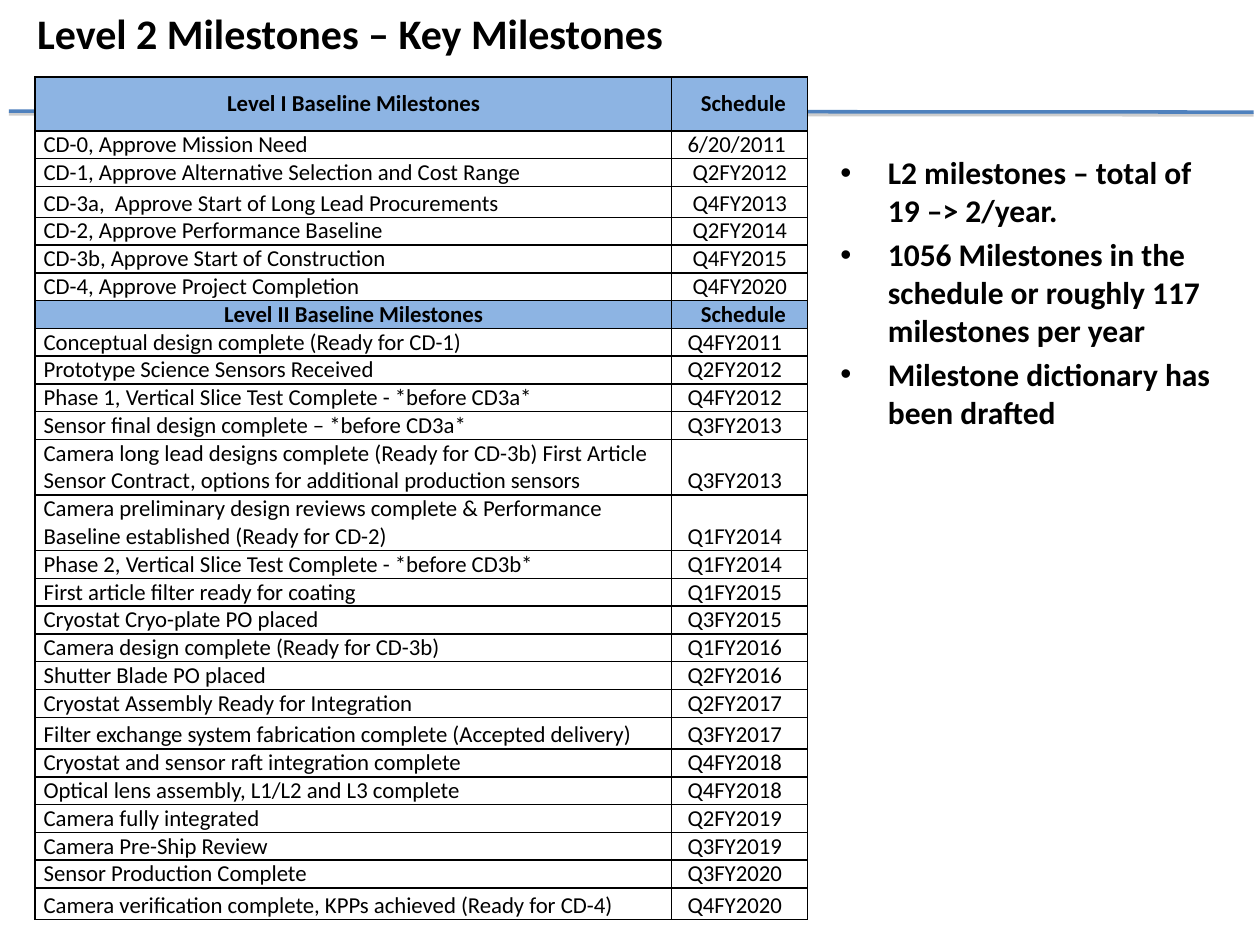
from lxml import etree
from pptx import Presentation
from pptx import util as u
from pptx.dml.color import RGBColor
from pptx.enum import shapes, text
from pptx.oxml import parse_xml
from pptx.oxml.ns import nsdecls, qn

COLORS = {"text": "000000", "header": "8DB4E3", "border": "000000",
          "rule": "4F81BD", "shadow": "808080"}
FONT = "Calibri"
ROW_H = 0.56
HEADER = "Schedule"

MILESTONES = [
    ("Level I Baseline Milestones", HEADER),
    ("CD-0, Approve Mission Need", "6/20/2011"),
    ("CD-1, Approve Alternative Selection and Cost Range", " Q2FY2012"),
    ("CD-3a,  Approve Start of Long Lead Procurements", " Q4FY2013"),
    ("CD-2, Approve Performance Baseline", " Q2FY2014"),
    ("CD-3b, Approve Start of Construction", " Q4FY2015"),
    ("CD-4, Approve Project Completion", " Q4FY2020"),
    ("Level II Baseline Milestones", HEADER),
    ("Conceptual design complete (Ready for CD-1)", "Q4FY2011"),
    ("Prototype Science Sensors Received", "Q2FY2012"),
    ("Phase 1, Vertical Slice Test Complete - *before CD3a*", "Q4FY2012"),
    ("Sensor final design complete – *before CD3a*", "Q3FY2013"),
    ("Camera long lead designs complete (Ready for CD-3b) First Article "
     "Sensor Contract, options for additional production sensors", "Q3FY2013"),
    ("Camera preliminary design reviews complete & Performance "
     "Baseline established (Ready for CD-2)", "Q1FY2014"),
    ("Phase 2, Vertical Slice Test Complete - *before CD3b*", "Q1FY2014"),
    ("First article filter ready for coating", "Q1FY2015"),
    ("Cryostat Cryo-plate PO placed", "Q3FY2015"),
    ("Camera design complete (Ready for CD-3b)", "Q1FY2016"),
    ("Shutter Blade PO placed", "Q2FY2016"),
    ("Cryostat Assembly Ready for Integration", "Q2FY2017"),
    ("Filter exchange system fabrication complete (Accepted delivery)", "Q3FY2017"),
    ("Cryostat and sensor raft integration complete", "Q4FY2018"),
    ("Optical lens assembly, L1/L2 and L3 complete", "Q4FY2018"),
    ("Camera fully integrated", "Q2FY2019"),
    ("Camera Pre-Ship Review", "Q3FY2019"),
    ("Sensor Production Complete", "Q3FY2020"),
    ("Camera verification complete, KPPs achieved (Ready for CD-4)", "Q4FY2020"),
]
TALL_ROWS = {0: 1.09, 3: 0.62, 12: 2 * ROW_H, 13: 2 * ROW_H, 20: 0.64, 26: 0.64}

NOTES = [
    "L2 milestones – total of 19 –> 2/year.",
    "1056 Milestones in the schedule or roughly 117 milestones per year",
    "Milestone dictionary has been drafted",
]


def rgb(name):
    return RGBColor.from_string(COLORS[name])


def style(p, size, bold):
    for r in p.runs:
        r.font.name = FONT
        r.font.size = u.Pt(size)
        r.font.bold = bold
        r.font.color.rgb = rgb("text")


def add_text_box(s, x, y, w, h):
    tf = s.shapes.add_textbox(u.Cm(x), u.Cm(y), u.Cm(w), u.Cm(h)).text_frame
    tf.word_wrap = True
    return tf


def add_title(s, title):
    tf = add_text_box(s, 0.43, 0.1, 19.53, 2.34)
    tf.margin_left, tf.margin_top = u.Cm(0.32), u.Cm(0.05)
    p = tf.paragraphs[0]
    p.text = title
    style(p, 24, True)


def add_rule(s):
    line = s.shapes.add_connector(shapes.MSO_CONNECTOR.STRAIGHT,
                                  u.Cm(25.27), u.Cm(2.26), u.Cm(0.18), u.Cm(2.24))
    line.line.color.rgb = rgb("rule")
    line.line.width = u.Pt(2)
    line._element.spPr.append(parse_xml(
        f'<a:effectLst {nsdecls("a")}><a:outerShdw blurRad="0" dist="20320" '
        f'dir="5400000" rotWithShape="0"><a:srgbClr val="{COLORS["shadow"]}">'
        '<a:alpha val="38000"/></a:srgbClr></a:outerShdw></a:effectLst>'))


def add_bullets(s, notes):
    tf = add_text_box(s, 16.69, 2.97, 8.28, 14.15)
    for i, note in enumerate(notes):
        p = tf.add_paragraph() if i else tf.paragraphs[0]
        p.text = note
        pPr = p._p.get_or_add_pPr()
        pPr.set("marL", str(u.Cm(0.96)))
        pPr.set("indent", str(u.Cm(-0.96)))
        etree.SubElement(pPr, qn("a:buFont")).set("typeface", "Arial")
        etree.SubElement(pPr, qn("a:buChar")).set("char", "•")
        if i:
            p.space_before = u.Pt(3.6)
        style(p, 18, True)


def set_borders(cell):
    tcPr = cell._tc.get_or_add_tcPr()
    for side in ("lnL", "lnR", "lnT", "lnB"):
        tcPr.append(parse_xml(
            f'<a:{side} {nsdecls("a")} w="12700"><a:solidFill>'
            f'<a:srgbClr val="{COLORS["border"]}"/></a:solidFill></a:{side}>'))


def fill_cell(cell, value, is_header, indent):
    set_borders(cell)
    cell.margin_left = cell.margin_right = u.Cm(0.17)
    cell.margin_top = cell.margin_bottom = 0
    p = cell.text_frame.paragraphs[0]
    p.text = value
    p._p.get_or_add_pPr().set("marL", str(u.Cm(indent)))
    style(p, 13, is_header)
    if is_header:
        p.alignment = text.PP_ALIGN.CENTER
        cell.vertical_anchor = text.MSO_ANCHOR.MIDDLE
        cell.fill.solid()
        cell.fill.fore_color.rgb = rgb("header")
    else:
        p.alignment = text.PP_ALIGN.LEFT
        cell.vertical_anchor = text.MSO_ANCHOR.BOTTOM
        cell.fill.background()


def add_milestones(s, rows):
    heights = [TALL_ROWS.get(i, ROW_H) for i in range(len(rows))]
    widths = (12.83, 2.74)
    table = s.shapes.add_table(len(rows), 2, u.Cm(0.71), u.Cm(1.55),
                               u.Cm(sum(widths)), u.Cm(sum(heights))).table
    table.first_row = table.horz_banding = False
    for col, width in zip(table.columns, widths):
        col.width = u.Cm(width)
    for i, (row, height) in enumerate(zip(rows, heights)):
        table.rows[i].height = u.Cm(height)
        for j, (value, indent) in enumerate(zip(row, (0, 0.15))):
            fill_cell(table.cell(i, j), value, row[1] == HEADER, indent)


def main():
    prs = Presentation()
    prs.slide_width, prs.slide_height = u.Cm(25.4), u.Cm(19.05)
    s = prs.slides.add_slide(prs.slide_layouts[6])
    add_rule(s)
    add_title(s, "Level 2 Milestones – Key Milestones")
    add_milestones(s, MILESTONES)
    add_bullets(s, NOTES)
    prs.save("out.pptx")


if __name__ == "__main__":
    main()
